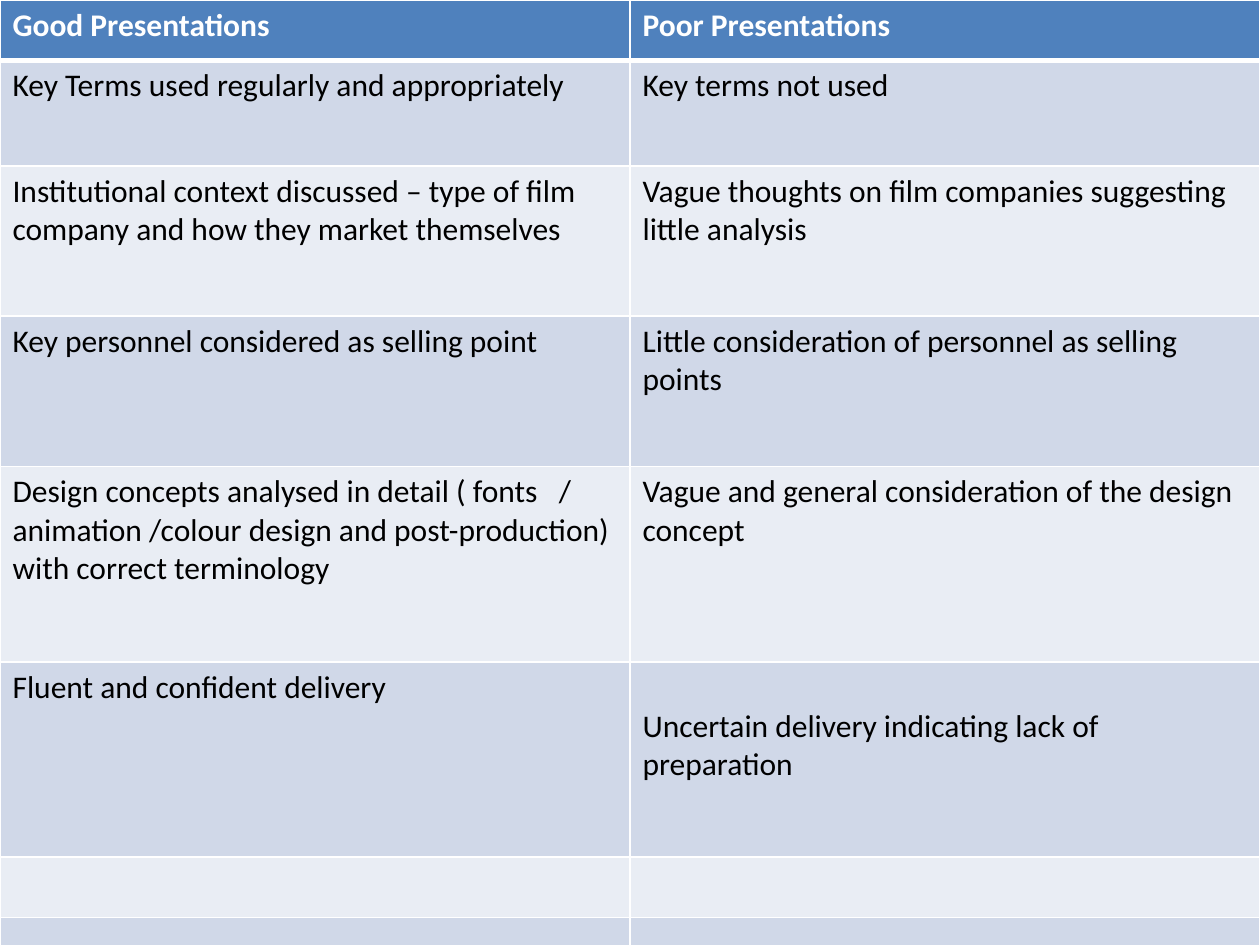
from dataclasses import dataclass

from lxml.etree import SubElement
from pptx import Presentation
from pptx.dml.color import RGBColor as RGB
from pptx.oxml.ns import qn
from pptx.util import Inches, Pt

WIDTH, HEIGHT = 10, 7.5


@dataclass(frozen=True)
class Theme:
    background: str = "1F497D"
    header: str = "4F81BD"
    bands: tuple = ("D0D8E8", "E9EDF4")
    header_text: str = "FFFFFF"
    body_text: str = "000000"
    rule: str = "FFFFFF"
    rule_width: float = 1
    header_rule_width: float = 3
    font: str = "Calibri"
    size: float = 18


class SlideBuilder:
    ONE_LINE = 0.48
    EXTRA_LINE = 1.07 / 3
    TEXT_LINE = 0.31

    def __init__(self, slide, theme):
        self.slide, self.theme = slide, theme

    def background(self):
        fill = self.slide.background.fill
        fill.solid()
        fill.fore_color.rgb = RGB.from_string(self.theme.background)

    def comparison(self, rows):
        """Draw full-width rows of (height in lines, cell texts); the first is the header."""
        heights = [self.ONE_LINE + (lines - 1) * self.EXTRA_LINE for lines, _ in rows]
        columns = len(rows[0][1])
        table = self.slide.shapes.add_table(
            len(rows), columns, 0, 0, Inches(WIDTH), Inches(sum(heights))).table
        for column in table.columns:
            column.width = Inches(WIDTH / columns)
        for index, (height, (_, texts)) in enumerate(zip(heights, rows)):
            table.rows[index].height = Inches(height)
            for column, text in enumerate(texts):
                self.cell(table.cell(index, column), text, index)

    def cell(self, cell, text, row):
        theme = self.theme
        is_header = row == 0
        self.borders(cell, top=row == 1, bottom=is_header)
        cell.fill.solid()
        cell.fill.fore_color.rgb = RGB.from_string(
            theme.header if is_header else theme.bands[(row - 1) % 2])
        paragraph = cell.text_frame.paragraphs[0]
        paragraph.font.size = Pt(theme.size)
        if text:
            run = paragraph.add_run()
            run.text = text
            font = run.font
            font.name, font.size, font.bold = theme.font, Pt(theme.size), is_header
            font.color.rgb = RGB.from_string(
                theme.header_text if is_header else theme.body_text)
        if text.startswith("Uncertain"):
            cell.margin_top += Inches(self.TEXT_LINE)  # sits one line lower

    def borders(self, cell, top, bottom):
        """Rule all four sides; top and bottom tell where the heavy header rule runs."""
        theme = self.theme
        properties = cell._tc.get_or_add_tcPr()
        for side, heavy in (("L", False), ("R", False), ("T", top), ("B", bottom)):
            width = theme.header_rule_width if heavy else theme.rule_width
            line = SubElement(properties, qn(f"a:ln{side}"), w=str(Pt(width)))
            fill = SubElement(line, qn("a:solidFill"))
            SubElement(fill, qn("a:srgbClr"), val=theme.rule)


ROWS = [
    (1, ("Good Presentations", "Poor Presentations")),
    (2, ("Key Terms used regularly and appropriately", "Key terms not used")),
    (3, ("Institutional context discussed – type of film company and how they "
         "market themselves",
         "Vague thoughts on film companies suggesting little analysis")),
    (3, ("Key personnel considered as selling point",
         "Little consideration of personnel as selling points")),
    (4, ("Design concepts analysed in detail ( fonts   / animation /colour design "
         "and post-production) with correct terminology",
         "Vague and general consideration of the design concept")),
    (4, ("Fluent and confident delivery",
         "Uncertain delivery indicating lack of preparation")),
    (1, ("", "")),
    (1, ("", "")),
]


def main():
    deck = Presentation()
    deck.slide_width, deck.slide_height = Inches(WIDTH), Inches(HEIGHT)
    blank_layout = deck.slide_layouts[6]
    builder = SlideBuilder(deck.slides.add_slide(blank_layout), Theme())
    builder.background()
    builder.comparison(ROWS)
    deck.save("out.pptx")


if __name__ == "__main__":
    main()
